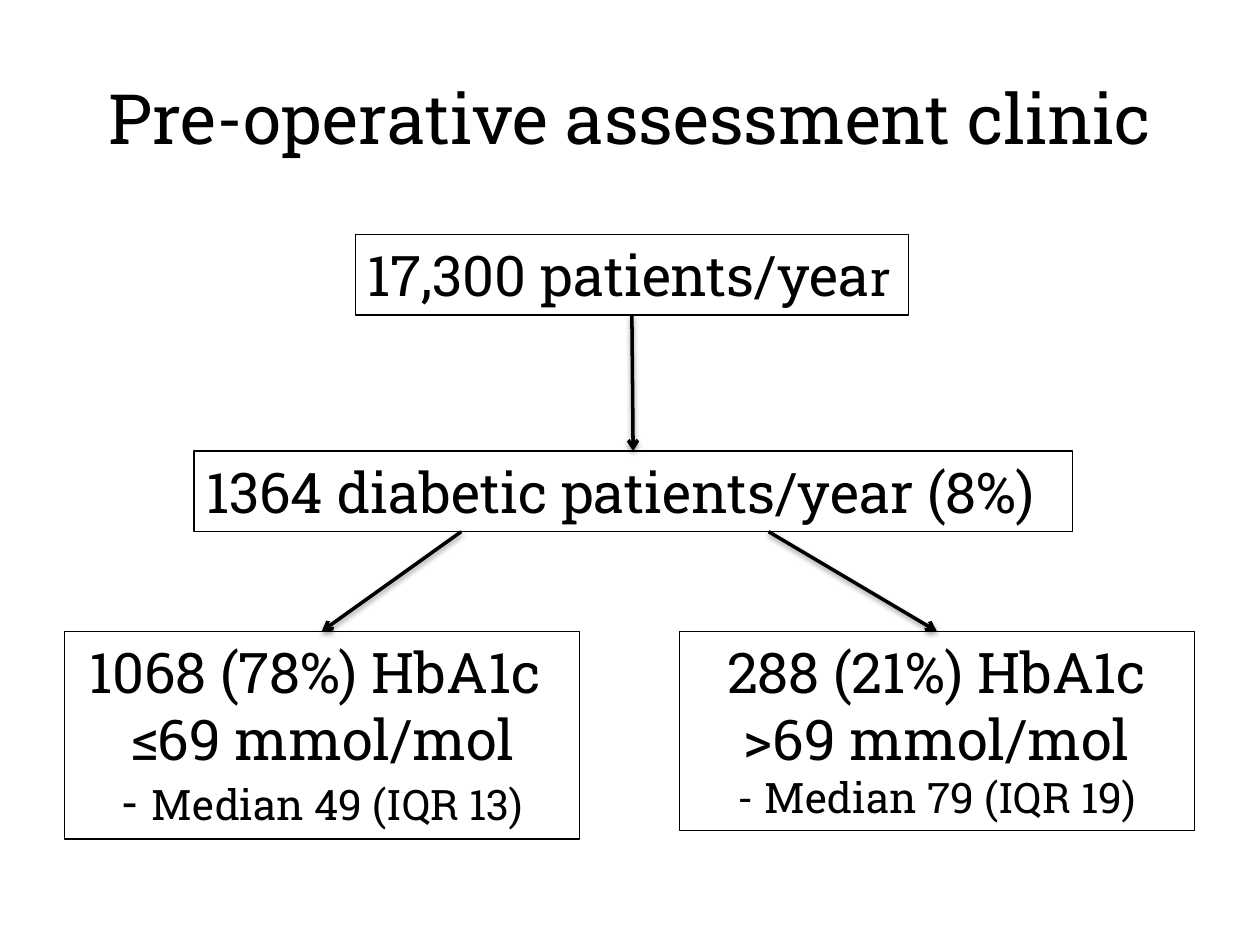
import pptx
import pptx.util
import pptx.dml.color
import pptx.enum.shapes
import pptx.enum.text
import pptx.oxml
from lxml import etree
from pptx.util import Inches

BLACK = pptx.dml.color.RGBColor(0, 0, 0)
WHITE = pptx.dml.color.RGBColor(255, 255, 255)
LEFT = pptx.enum.text.PP_ALIGN.LEFT
CENTER = pptx.enum.text.PP_ALIGN.CENTER
TOP, BOTTOM = 0, 2
NS = "http://schemas.openxmlformats.org/drawingml/2006/main"
SHADOW = (
    f'<a:effectLst xmlns:a="{NS}">'
    '<a:outerShdw blurRad="40000" dist="20000" dir="5400000" rotWithShape="0">'
    '<a:srgbClr val="000000"><a:alpha val="38000"/></a:srgbClr>'
    "</a:outerShdw></a:effectLst>"
)


class Chart:
    font = "Roboto Slab"

    def __init__(self, slide):
        self.slide = slide

    def add_text(self, frame, paras, align):
        """Fill a text frame; each paragraph is a list of (text, size) runs."""
        for i, runs in enumerate(paras):
            para = frame.paragraphs[0] if i == 0 else frame.add_paragraph()
            para.alignment = align
            for text, size in runs:
                run = para.add_run()
                run.text = text
                run.font.name = self.font
                run.font.size = pptx.util.Pt(size)
                run.font.color.rgb = BLACK

    def title(self, text, x, y, w, h):
        shape = self.slide.shapes.add_textbox(
            Inches(x), Inches(y), Inches(w), Inches(h))
        frame = shape.text_frame
        frame.word_wrap = True
        frame.vertical_anchor = pptx.enum.text.MSO_ANCHOR.MIDDLE
        self.add_text(frame, [[(text, 39.6)]], CENTER)

    def box(self, paras, x, y, w, h, align=CENTER, wrap=True):
        shape = self.slide.shapes.add_shape(
            pptx.enum.shapes.MSO_SHAPE.RECTANGLE,
            Inches(x), Inches(y), Inches(w), Inches(h))
        shape.shadow.inherit = False
        shape.fill.background()
        shape.line.color.rgb = BLACK
        shape.line.width = pptx.util.Pt(0.75)
        frame = shape.text_frame
        frame.word_wrap = wrap
        frame.auto_size = pptx.enum.text.MSO_AUTO_SIZE.SHAPE_TO_FIT_TEXT
        frame.vertical_anchor = pptx.enum.text.MSO_ANCHOR.TOP
        self.add_text(frame, paras, align)
        return shape

    def arrow(self, source, target, x=None):
        """Join two boxes; x moves the start along the source's lower side."""
        start = source.left + source.width // 2 if x is None else Inches(x)
        line = self.slide.shapes.add_connector(
            pptx.enum.shapes.MSO_CONNECTOR.STRAIGHT,
            start, source.top + source.height,
            target.left + target.width // 2, target.top)
        if x is None:
            line.begin_connect(source, BOTTOM)
        line.end_connect(target, TOP)
        line.line.color.rgb = BLACK
        line.line.width = pptx.util.Pt(2)
        stroke = line.element.spPr.find(f"{{{NS}}}ln")
        etree.SubElement(stroke, f"{{{NS}}}tailEnd", type="arrow")
        stroke.addnext(etree.fromstring(SHADOW))


def main():
    deck = pptx.Presentation()
    deck.slide_width, deck.slide_height = Inches(10), Inches(7.5)
    slide = deck.slides.add_slide(deck.slide_layouts[6])
    slide.background.fill.solid()
    slide.background.fill.fore_color.rgb = WHITE

    flow = Chart(slide)
    flow.title("Pre-operative assessment clinic", 0.5, 0.3, 9, 1.25)
    total = flow.box([[("17,300 patients/yea", 32), ("r", 28)]],
                     2.82, 1.86, 4.39, 0.64, LEFT, False)
    cases = flow.box([[("1364 diabetic patients/year (8%)", 32)]],
                     1.54, 3.58, 6.97, 0.64, LEFT, False)
    low = flow.box([[("1068 (78%) HbA1c  ≤69 mmol/mol", 32)],
                    [("- ", 28), ("Median 49 (IQR 13)", 24)]],
                   0.51, 5.01, 4.09, 1.65)
    high = flow.box([[("288 (21%) HbA1c >69 mmol/mol", 32)],
                     [("- Median 79 (IQR 19)", 24)]],
                    5.39, 5.01, 4.09, 1.58)
    flow.arrow(total, cases)
    flow.arrow(cases, low, 3.66)
    flow.arrow(cases, high, 6.1)
    deck.save("out.pptx")


if __name__ == "__main__":
    main()
